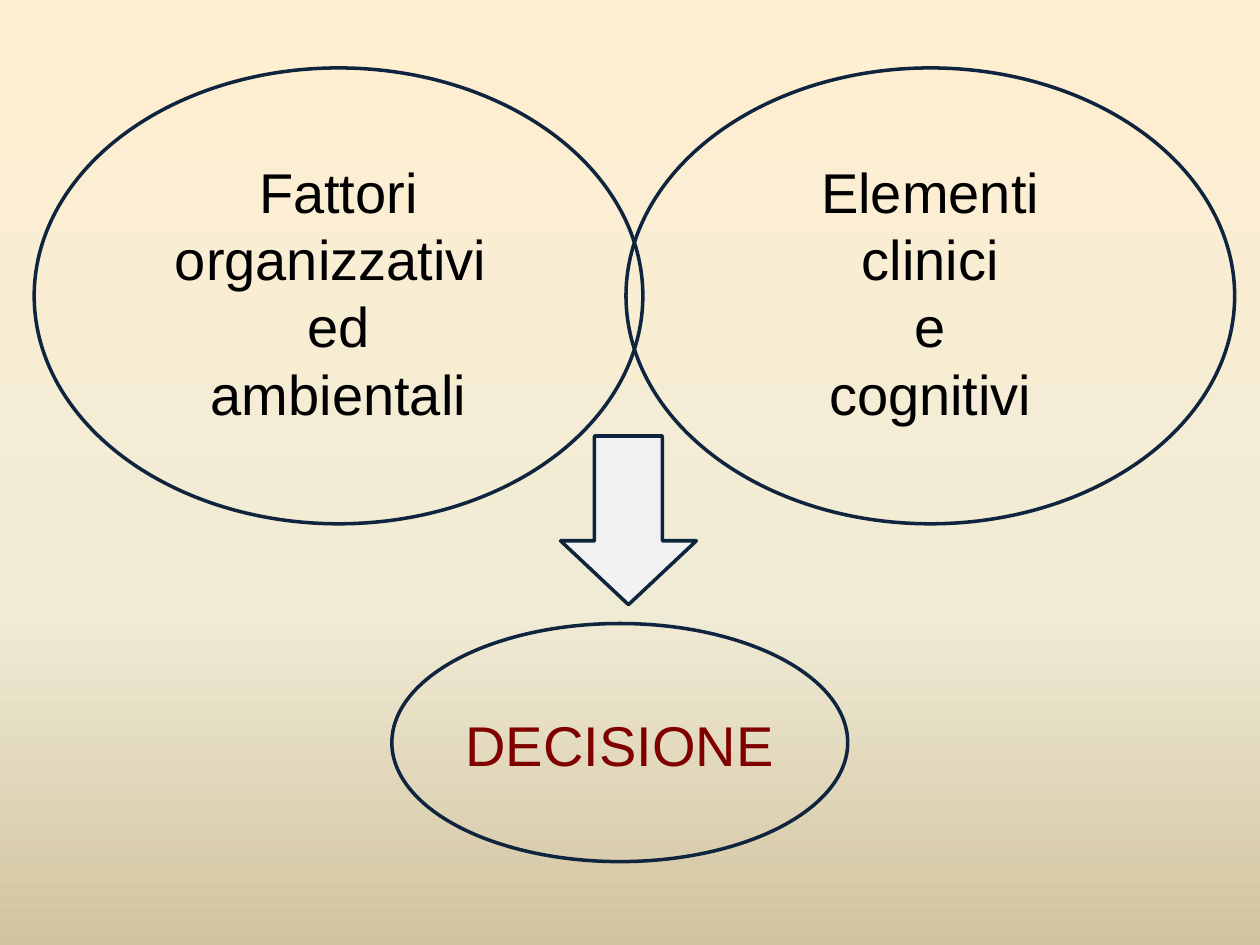
"""Build a slide where two overlapping groups of factors lead to a decision."""
from copy import deepcopy

from pptx import Presentation
from pptx import util as u
from pptx.dml.color import RGBColor
from pptx.enum import shapes, text
from pptx.oxml.ns import qn

NAVY = RGBColor(0x0F, 0x24, 0x3E)
PALE = RGBColor(0xF2, 0xF2, 0xF2)
BLACK = RGBColor(0, 0, 0)
MAROON = RGBColor(0x80, 0, 0)
CREAM = RGBColor(0xFF, 0xEF, 0xD1)
IVORY = RGBColor(0xF0, 0xEB, 0xD5)
SAND = RGBColor(0xD1, 0xC3, 0x9F)

deck = Presentation()
deck.slide_width, deck.slide_height = u.Cm(25.4), u.Cm(19.05)
page = deck.slides.add_slide(deck.slide_layouts[6])

fill = page.background.fill
fill.gradient()
fill.gradient_angle = 270
stops = page._element.find(".//" + qn("a:gsLst"))
stops.insert(1, deepcopy(stops[0]))
for stop, tone, place in zip(fill.gradient_stops, (CREAM, IVORY, SAND), (0, 0.65, 1)):
    stop.color.rgb = tone
    stop.position = place


def draw(kind, *box):
    form = page.shapes.add_shape(kind, *map(u.Cm, box))
    form.shadow.inherit = False
    form.fill.background()
    form.line.color.rgb = NAVY
    form.line.width = u.Pt(2)
    return form


def write(words, tone, *box):
    frame = page.shapes.add_textbox(*map(u.Cm, box)).text_frame
    frame.word_wrap = True
    frame.auto_size = text.MSO_AUTO_SIZE.SHAPE_TO_FIT_TEXT
    frame.text = words
    for line in frame.paragraphs:
        line.alignment = text.PP_ALIGN.CENTER
        font = line.runs[0].font
        font.name, font.size = "Arial", u.Pt(32)
        font.color.rgb = tone


OVAL = shapes.MSO_SHAPE.OVAL
sides = (
    (0.69, "Fattori\norganizzativi \ned\nambientali"),
    (12.62, "Elementi\nclinici\ne\ncognitivi"),
)
for left, words in sides:
    draw(OVAL, left, 1.37, 12.27, 9.19)
draw(OVAL, 7.9, 12.57, 9.19, 4.8)

arrow = draw(shapes.MSO_SHAPE.DOWN_ARROW, 11.3, 8.79, 2.74, 3.4)
arrow.adjustments[1] = 0.47
arrow.fill.solid()
arrow.fill.fore_color.rgb = PALE

for left, words in sides:
    write(words, BLACK, left, 3.05, 12.27, 5.74)
write("DECISIONE", MAROON, 7.9, 14.2, 9.19, 1.63)

deck.save("out.pptx")
